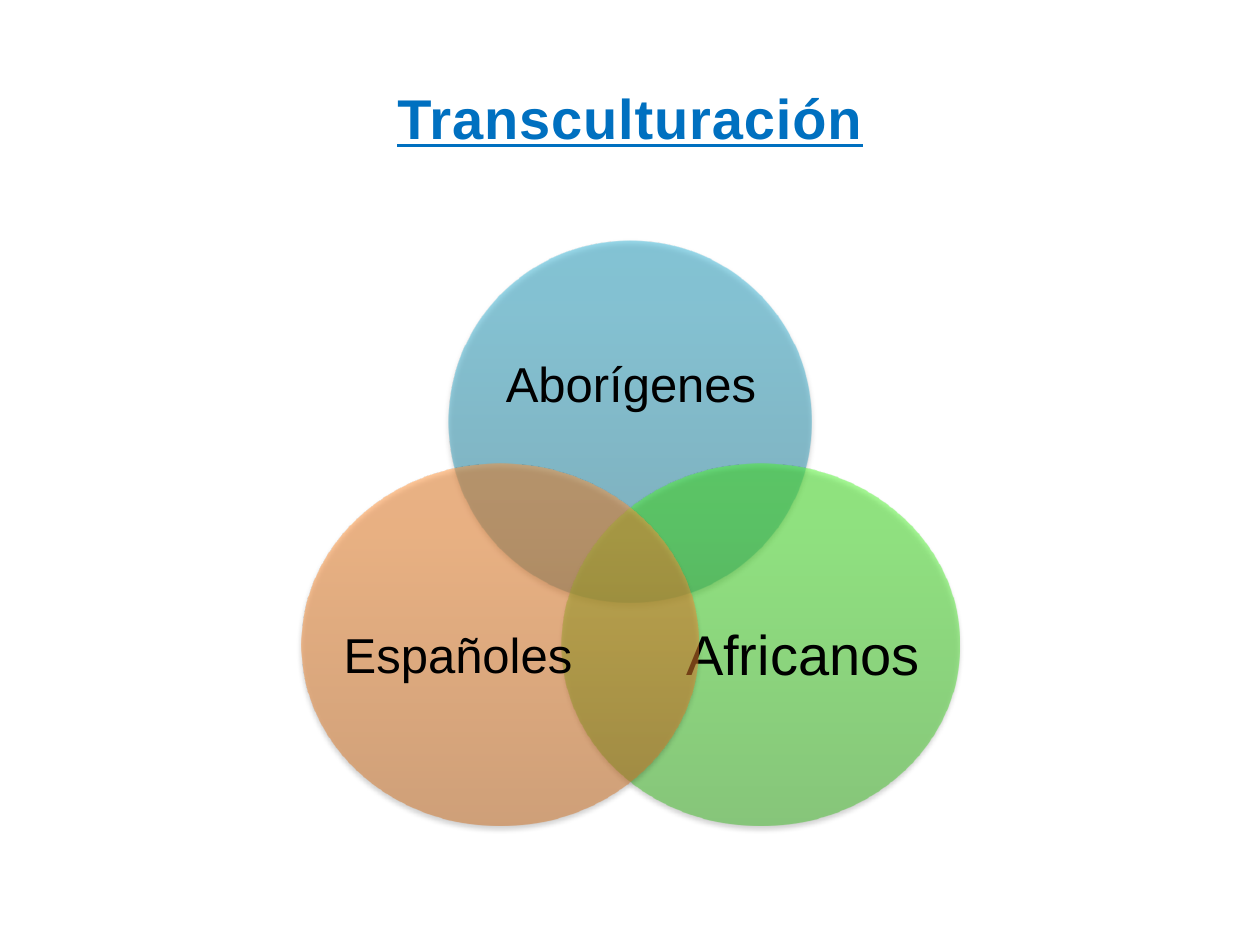
from dataclasses import dataclass

from lxml import etree
from pptx import Presentation, util as u
from pptx.dml.color import RGBColor
from pptx.enum import shapes, text
from pptx.oxml import ns

EMU_PER_PX = 914400 / 126
COLORS = {
    "title": "0070C0",
    "label": "000000",
    "shadow": "000000",
    "blue": ("2A88A2", "37B1D2", "34B4D6"),
    "green": ("3CB923", "4EF02E", "4CF52A"),
    "orange": ("CC6E20", "FF9034", "FF9136"),
}
STOPS = (0, 80, 100)  # percent along each gradient
Box = tuple[int, int, int, int]


@dataclass
class Group:
    name: str
    size: int
    palette: str
    circle: Box
    label: Box


TITLE_BOX: Box = (63, 38, 1134, 158)
GROUPS = [
    Group("Aborígenes", 28, "blue", (449, 241, 362, 362), (498, 305, 266, 163)),
    Group("Africanos", 32, "green", (562, 464, 397, 362), (684, 558, 238, 199)),
    Group("Españoles", 28, "orange", (301, 464, 397, 362), (339, 558, 238, 199)),
]


def px(box: Box) -> list[u.Emu]:
    return [u.Emu(round(value * EMU_PER_PX)) for value in box]


def add_text(slide, box: Box, words: str, color: str, line_spacing: float, **font_format):
    frame = slide.shapes.add_textbox(*px(box)).text_frame
    frame_format = dict(word_wrap=True, vertical_anchor=text.MSO_ANCHOR.MIDDLE,
                        margin_left=0, margin_right=0, margin_top=0, margin_bottom=0)
    for key, value in frame_format.items():
        setattr(frame, key, value)
    paragraph = frame.paragraphs[0]
    paragraph.alignment = text.PP_ALIGN.CENTER
    paragraph.line_spacing = line_spacing
    run = paragraph.add_run()
    run.text = words
    for key, value in dict(name="Arial", **font_format).items():
        setattr(run.font, key, value)
    run.font.color.rgb = RGBColor.from_string(COLORS[color])
    return run


def add_circle(slide, group: Group) -> None:
    circle = slide.shapes.add_shape(shapes.MSO_SHAPE.OVAL, *px(group.circle))
    circle.line.fill.background()
    properties = circle._element.spPr
    stops = "".join(
        f'<a:gs pos="{stop * 1000}"><a:srgbClr val="{color}"><a:alpha val="50000"/></a:srgbClr></a:gs>'
        for stop, color in zip(STOPS, COLORS[group.palette]))
    # Half-transparent gradient, running upwards
    gradient = etree.fromstring(
        f'<a:gradFill {ns.nsdecls("a")} rotWithShape="1"><a:gsLst>{stops}</a:gsLst>'
        '<a:lin ang="16200000" scaled="0"/></a:gradFill>')
    properties.find(ns.qn("a:prstGeom")).addnext(gradient)
    # Soft shadow just below the circle
    properties.append(etree.fromstring(
        f'<a:effectLst {ns.nsdecls("a")}><a:outerShdw blurRad="{u.Pt(3.1)}" dist="{u.Pt(1.8)}" '
        f'dir="5400000" rotWithShape="0"><a:srgbClr val="{COLORS["shadow"]}">'
        '<a:alpha val="35000"/></a:srgbClr></a:outerShdw></a:effectLst>'))


def main() -> None:
    deck = Presentation()
    deck.slide_width, deck.slide_height = u.Inches(10), u.Inches(7.5)
    slide = deck.slides.add_slide(deck.slide_layouts[6])

    # Title
    title = add_text(slide, TITLE_BOX, "Transculturación", "title", 1.0,
                     size=u.Pt(32), bold=True, underline=True)
    title.font._element.set("spc", "50")

    # Venn diagram: later circles tint the earlier labels
    for group in GROUPS:
        add_circle(slide, group)
        add_text(slide, group.label, group.name, "label", 0.9, size=u.Pt(group.size))

    deck.save("out.pptx")


if __name__ == "__main__":
    main()
